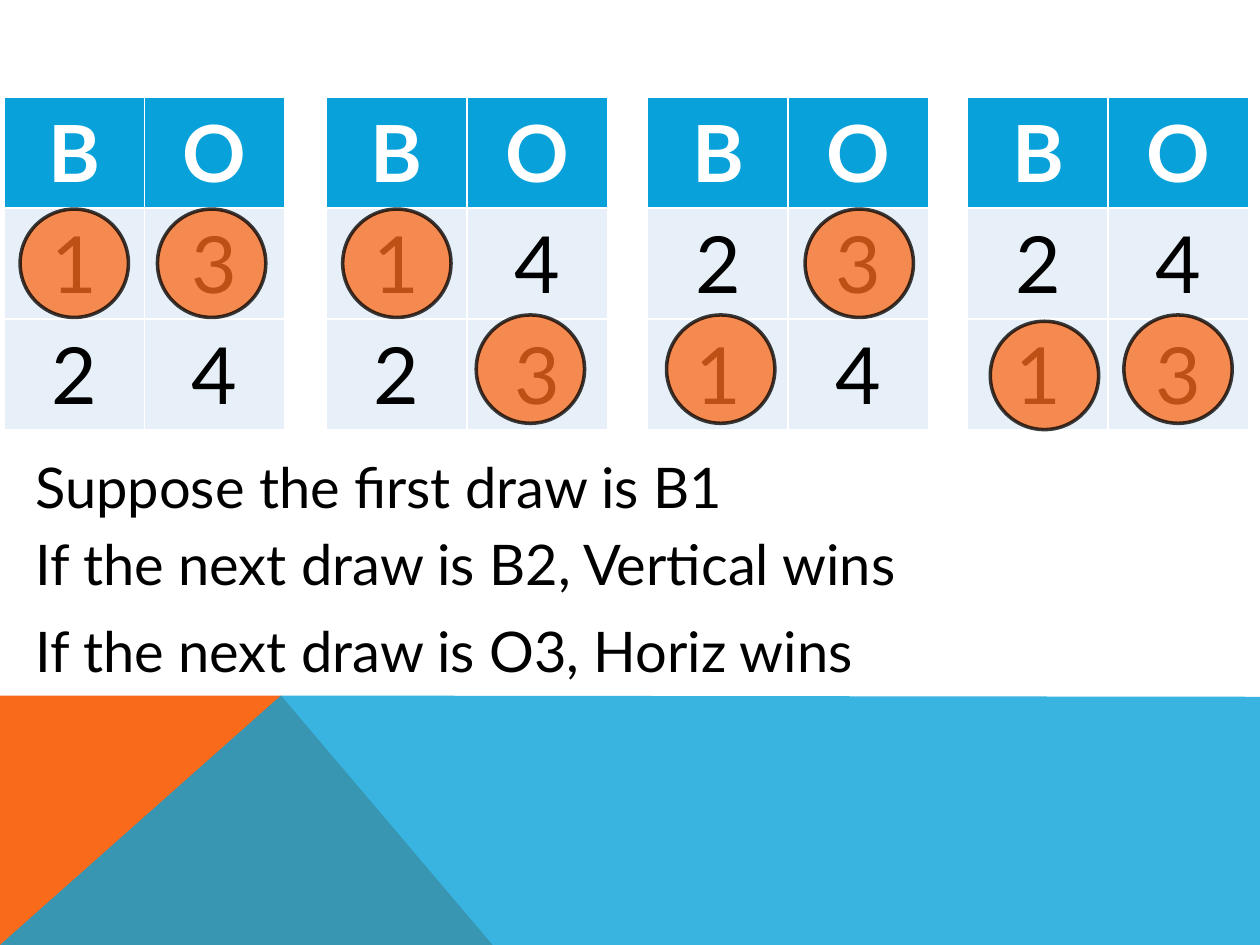
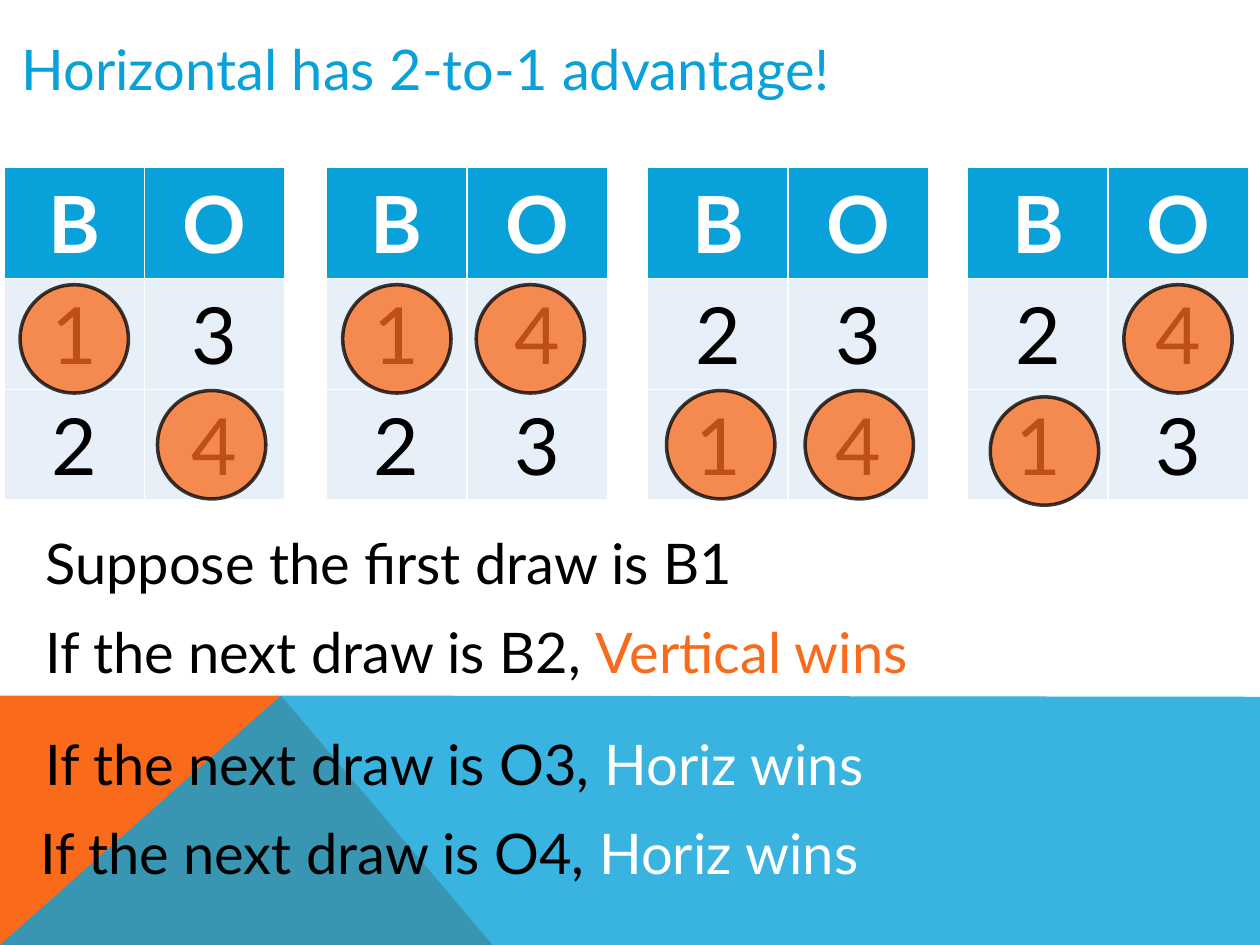
from lxml import etree
from pptx import Presentation
from pptx.dml.color import RGBColor
from pptx.enum import shapes, text
from pptx.oxml.ns import qn
from pptx.util import Inches, Pt

BLUE = RGBColor(0x08, 0xA1, 0xD9)
ORANGE = RGBColor(0xF9, 0x6A, 0x1B)
PALE = RGBColor(0xE7, 0xF0, 0xF8)
WHITE = RGBColor(0xFF, 0xFF, 0xFF)
BLACK = RGBColor(0x00, 0x00, 0x00)
FONT = "Lato"
INSET = Inches(0.04)

TITLE_ONLY, BLANK = 5, 6
BOARD_SIZE = (2.23, 2.64)
MARK_SIZE = 0.86
ROW_DROP = 0.84  # from a mark in the upper row to one in the lower row

# Each board: left, upper row, lower row, lefts of its B and O marks
BOARDS = [
    (0.03, "13", "24", (0.16, 1.25)),
    (2.59, "14", "23", (2.72, 3.78)),
    (5.14, "23", "14", (5.29, 6.39)),
    (7.68, "24", "13", (7.86, 8.92)),
]


def add_span(para, content, *, size=32, color=BLACK, bold=False):
    span = para.add_run()
    span.text = content
    span.font.name = FONT
    span.font.size = Pt(size)
    span.font.bold = bold
    span.font.color.rgb = color


def set_opacity(shape, percent):
    """Make the fill and the line of a shape partly transparent."""
    for color in shape.element.spPr.iter(qn("a:srgbClr")):
        etree.SubElement(color, qn("a:alpha"), val=str(percent * 1000))


class Deck:
    def __init__(self):
        self.file = Presentation()
        self.file.slide_width = Inches(10)
        self.file.slide_height = Inches(7.5)
        self.page = None

    def add_page(self, layout):
        self.page = self.file.slides.add_slide(self.file.slide_layouts[layout])
        self.add_band([(0, 7.5), (0, 5.52), (2.23, 5.52), (3.91, 7.5)], ORANGE)
        blue_band = self.add_band([(0, 7.5), (2.23, 5.52), (10, 5.53), (10, 7.5)], BLUE)
        set_opacity(blue_band, 80)

    def add_band(self, corners, color):
        points = [(Inches(x), Inches(y)) for x, y in corners]
        outline = self.page.shapes.build_freeform(*points[0])
        outline.add_line_segments(points[1:], close=True)
        band = outline.convert_to_shape()
        band.shadow.inherit = False
        band.fill.solid()
        band.fill.fore_color.rgb = color
        band.line.fill.background()
        return band

    def format_line(self, box, parts):
        """Fill a one-line box with (words, colour) parts."""
        frame = box.text_frame
        frame.word_wrap = True
        frame.auto_size = text.MSO_AUTO_SIZE.SHAPE_TO_FIT_TEXT
        frame.vertical_anchor = text.MSO_ANCHOR.MIDDLE
        frame.margin_left = frame.margin_right = INSET
        frame.margin_top = frame.margin_bottom = INSET
        para = frame.paragraphs[0]
        para.alignment = text.PP_ALIGN.LEFT
        for words, color in parts:
            add_span(para, words, color=color)

    def add_title(self, words):
        title = self.page.shapes.title
        title.left, title.top = Inches(0.13), Inches(0.23)
        title.width, title.height = Inches(10.02), Inches(0.62)
        self.format_line(title, [(words, BLUE)])

    def add_line(self, left, top, *parts, width=10.02):
        box = self.page.shapes.add_textbox(
            Inches(left), Inches(top), Inches(width), Inches(0.62))
        self.format_line(box, parts)

    def add_board(self, left, top, rows):
        width, height = BOARD_SIZE
        frame = self.page.shapes.add_table(
            len(rows), 2, Inches(left), Inches(top), Inches(width), Inches(height))
        table = frame.table
        table.horz_banding = False
        for r, row in enumerate(rows):
            for c, symbol in enumerate(row):
                cell = table.cell(r, c)
                header = r == 0
                cell.fill.solid()
                cell.fill.fore_color.rgb = BLUE if header else PALE
                cell.vertical_anchor = text.MSO_ANCHOR.MIDDLE
                cell.margin_left = cell.margin_right = INSET
                cell.margin_top = cell.margin_bottom = INSET
                para = cell.text_frame.paragraphs[0]
                para.alignment = text.PP_ALIGN.CENTER
                add_span(para, symbol, size=45, bold=header,
                         color=WHITE if header else BLACK)

    def add_mark(self, left, top):
        mark = self.page.shapes.add_shape(
            shapes.MSO_SHAPE.OVAL, Inches(left), Inches(top),
            Inches(MARK_SIZE), Inches(MARK_SIZE))
        mark.shadow.inherit = False
        mark.fill.solid()
        mark.fill.fore_color.rgb = ORANGE
        mark.line.color.rgb = BLACK
        mark.line.width = Pt(2)
        set_opacity(mark, 76)

    def add_game(self, board_top, mark_top, drawn):
        """Draw the four boards and mark the drawn number of each column."""
        for left, upper, lower, _ in BOARDS:
            self.add_board(left, board_top, ["BO", upper, lower])
        for _, upper, lower, mark_lefts in BOARDS:
            for column, number in enumerate(drawn):
                in_lower = lower[column] == number
                drop = ROW_DROP if in_lower else 0
                if column == 0 and in_lower and upper == "24":
                    drop += 0.05
                self.add_mark(mark_lefts[column], mark_top + drop)


def main():
    deck = Deck()

    deck.add_page(BLANK)
    deck.add_game(0.77, 1.66, "13")
    deck.add_line(0.24, 3.55, ("Suppose the first draw is B1", BLACK), width=8.65)
    deck.add_line(0.24, 4.16, ("If the next draw is B2, Vertical wins", BLACK))
    deck.add_line(0.24, 4.85, ("If the next draw is O3, Horiz wins", BLACK))

    deck.add_page(TITLE_ONLY)
    deck.add_title("Horizontal has 2-to-1 advantage!")
    deck.add_game(1.33, 2.26, "14")
    deck.add_line(0.32, 4.15, ("Suppose the first draw is B1", BLACK), width=8.65)
    for left, top, draw, winner, color in [
        (0.32, 4.86, "B2", "Vertical", ORANGE),
        (0.32, 5.75, "O3", "Horiz", WHITE),
        (0.28, 6.45, "O4", "Horiz", WHITE),
    ]:
        deck.add_line(left, top, (f"If the next draw is {draw}, ", BLACK),
                      (f"{winner} wins", color))

    deck.file.save("out.pptx")


if __name__ == "__main__":
    main()
